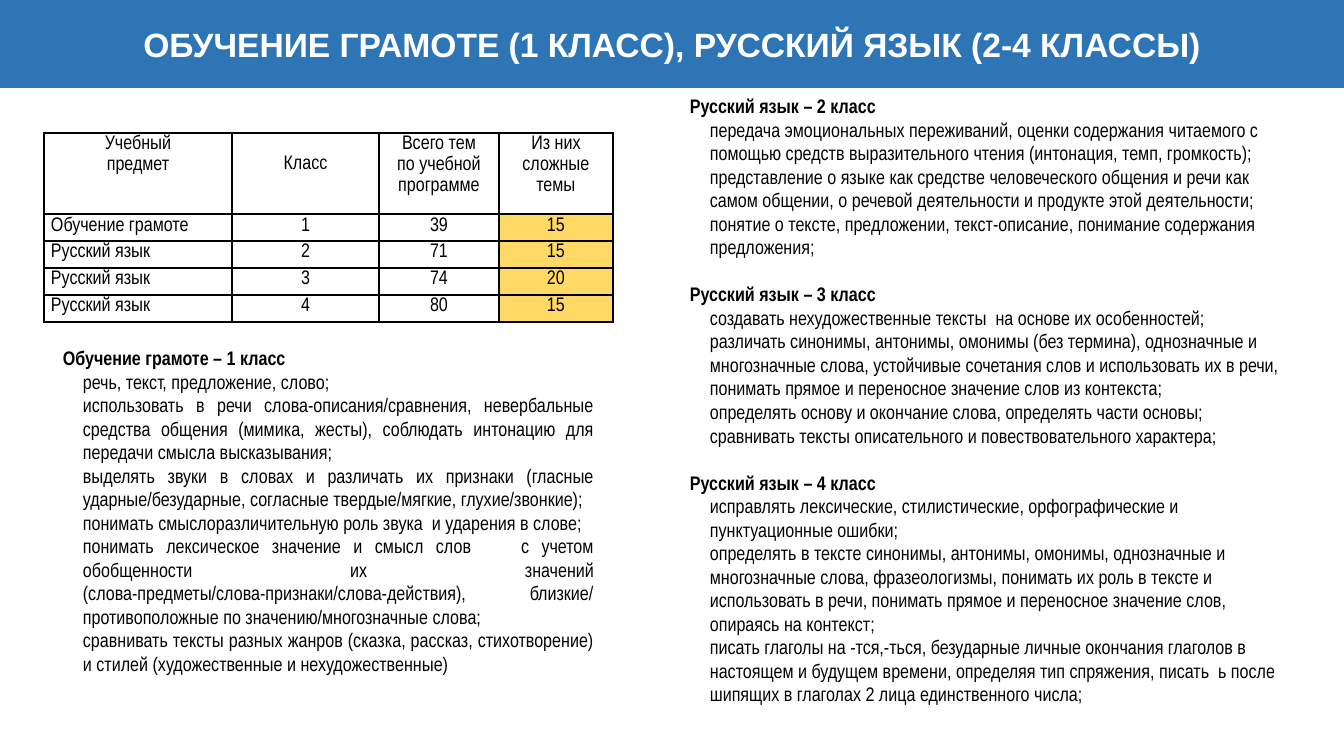
from pptx import Presentation
from pptx.dml.color import RGBColor
from pptx.enum.text import MSO_ANCHOR, MSO_AUTO_SIZE, PP_ALIGN
from pptx.oxml import parse_xml
from pptx.oxml.ns import nsdecls
from pptx.util import Pt

BLUE = RGBColor(0x2E, 0x75, 0xB6)
YELLOW = RGBColor(0xFF, 0xD9, 0x66)
WHITE = RGBColor(0xFF, 0xFF, 0xFF)
BLACK = RGBColor(0, 0, 0)
LEFT, CENTER, JUSTIFY = PP_ALIGN.LEFT, PP_ALIGN.CENTER, PP_ALIGN.JUSTIFY
MIDDLE = MSO_ANCHOR.MIDDLE
NO_FIT = MSO_AUTO_SIZE.NONE
PAGE_WIDTH, PAGE_HEIGHT = 1344, 756
SCALE = 12192000 / PAGE_WIDTH

HEADERS = [
    ["Учебный", "предмет"],
    ["Класс"],
    ["Всего тем", "по учебной программе"],
    ["Из них", "сложные темы"],
]
SUBJECTS = [
    ("Обучение грамоте", 1, 39, 15),
    ("Русский язык", 2, 71, 15),
    ("Русский язык", 3, 74, 20),
    ("Русский язык", 4, 80, 15),
]
FIRST_GRADE = [
    ("Обучение грамоте – 1 класс", [
        "речь, текст, предложение, слово;",
        "использовать в речи слова-описания/сравнения, невербальные средства общения "
        "(мимика, жесты), соблюдать интонацию для передачи смысла высказывания;",
        "выделять звуки в словах и различать их признаки (гласные ударные/безударные, "
        "согласные твердые/мягкие, глухие/звонкие);",
        "понимать смыслоразличительную роль звука  и ударения в слове;",
        "понимать лексическое значение и смысл слов    с учетом обобщенности их значений "
        "(слова-предметы/слова-признаки/слова-действия), близкие/ "
        "противоположные по значению/многозначные слова;",
        "сравнивать тексты разных жанров (сказка, рассказ, стихотворение) "
        "и стилей (художественные и нехудожественные)",
    ]),
]
LATER_GRADES = [
    ("Русский язык – 2 класс", [
        "передача эмоциональных переживаний, оценки содержания читаемого с помощью "
        "средств выразительного чтения (интонация, темп, громкость);",
        "представление о языке как средстве человеческого общения и речи как самом "
        "общении, о речевой деятельности и продукте этой деятельности;",
        "понятие о тексте, предложении, текст-описание, понимание содержания предложения;",
    ]),
    ("Русский язык – 3 класс", [
        "создавать нехудожественные тексты  на основе их особенностей;",
        "различать синонимы, антонимы, омонимы (без термина), однозначные и многозначные "
        "слова, устойчивые сочетания слов и использовать их в речи, понимать прямое и "
        "переносное значение слов из контекста;",
        "определять основу и окончание слова, определять части основы;",
        "сравнивать тексты описательного и повествовательного характера;",
    ]),
    ("Русский язык – 4 класс", [
        "исправлять лексические, стилистические, орфографические и пунктуационные ошибки;",
        "определять в тексте синонимы, антонимы, омонимы, однозначные и многозначные "
        "слова, фразеологизмы, понимать их роль в тексте и использовать в речи, понимать "
        "прямое и переносное значение слов, опираясь на контекст;",
        "писать глаголы на -тся,-ться, безударные личные окончания глаголов в настоящем "
        "и будущем времени, определяя тип спряжения, писать  ь после шипящих в глаголах "
        "2 лица единственного числа;",
    ]),
]


def px(length):
    """Turn pixels into EMU."""
    return round(length * SCALE)


class SlideBuilder:
    """Hold the text style and the current slide."""

    title_font, body_font, body_size = "Arial", "Arial Narrow", 14

    def __init__(self, page):
        """Keep the slide to be filled."""
        self.page = page

    def style(self, para, size, font, color=BLACK, bold=False, align=LEFT):
        """Format a whole paragraph."""
        para.font.size, para.font.name = Pt(size), font
        para.font.color.rgb, para.font.bold = color, bold
        para.alignment = align

    def title(self, text, left, top, width, height):
        """Fill the title placeholder as a coloured band."""
        band = self.page.shapes.title
        band.left, band.top, band.width, band.height = map(px, (left, top, width, height))
        band.fill.solid()
        band.fill.fore_color.rgb = BLUE
        frame = band.text_frame
        frame.text = text
        frame.vertical_anchor, frame.auto_size = MIDDLE, NO_FIT
        self.style(frame.paragraphs[0], 24, self.title_font, WHITE, True, CENTER)

    def sections(self, groups, left, top, width, height, align):
        """Add a text box of bold headings with indented topics."""
        frame = self.page.shapes.add_textbox(*map(px, (left, top, width, height))).text_frame
        frame.word_wrap = True
        for number, (heading, topics) in enumerate(groups):
            para = frame.add_paragraph() if number else frame.paragraphs[0]
            para.text = heading
            self.style(para, self.body_size, self.body_font, bold=True)
            if number:
                para.space_before = Pt(16.8)
            for topic in topics:
                para = frame.add_paragraph()
                para.text = topic
                self.style(para, self.body_size, self.body_font, align=align)
                para._p.get_or_add_pPr().set("marL", str(px(20)))

    def cell(self, cell, lines, align, spacing, side, top=0, fill=None):
        """Write, fill and border one table cell."""
        cell.margin_left = cell.margin_right = px(side)
        cell.margin_top, cell.margin_bottom = px(top), 0
        cell.text = "\n".join(lines)
        for para in cell.text_frame.paragraphs:
            self.style(para, self.body_size, self.body_font, align=align)
            para.line_spacing = spacing
        for position, edge in enumerate(("lnL", "lnR", "lnT", "lnB")):
            line = parse_xml(
                f'<a:{edge} {nsdecls("a")} w="12700"><a:solidFill>'
                f'<a:srgbClr val="{BLACK}"/></a:solidFill></a:{edge}>')
            cell._tc.get_or_add_tcPr().insert(position, line)
        if fill:
            cell.fill.solid()
            cell.fill.fore_color.rgb = fill
        else:
            cell.fill.background()

    def table(self, headers, rows, left, top, widths, heights):
        """Add the table of topic counts."""
        table = self.page.shapes.add_table(
            len(heights), len(widths), px(left), px(top),
            px(sum(widths)), px(sum(heights))).table
        table.first_row = table.horz_banding = False
        for column, width in zip(table.columns, widths):
            column.width = px(width)
        for row, height in zip(table.rows, heights):
            row.height = px(height)
        for c, lines in enumerate(headers):
            self.cell(table.cell(0, c), lines, CENTER, 1.14, 4, 20 if len(lines) == 1 else 0)
        for r, values in enumerate(rows, 1):
            for c, value in enumerate(values):
                self.cell(table.cell(r, c), [str(value)], CENTER if c else LEFT, 1.15, 7,
                          fill=YELLOW if c == len(values) - 1 else None)


def main():
    """Build and save the deck."""
    deck = Presentation()
    deck.slide_width, deck.slide_height = px(PAGE_WIDTH), px(PAGE_HEIGHT)
    builder = SlideBuilder(deck.slides.add_slide(deck.slide_layouts[5]))
    builder.title("ОБУЧЕНИЕ ГРАМОТЕ (1 КЛАСС), РУССКИЙ ЯЗЫК (2-4 КЛАССЫ)",
                  0, 0, PAGE_WIDTH, 88)
    builder.table(HEADERS, SUBJECTS, 44, 133, [188, 147, 120, 114], [81] + [27] * 4)
    builder.sections(FIRST_GRADE, 53, 341, 551, 343, JUSTIFY)
    builder.sections(LATER_GRADES, 680, 89, 621, 628, LEFT)
    deck.save("out.pptx")


if __name__ == "__main__":
    main()
